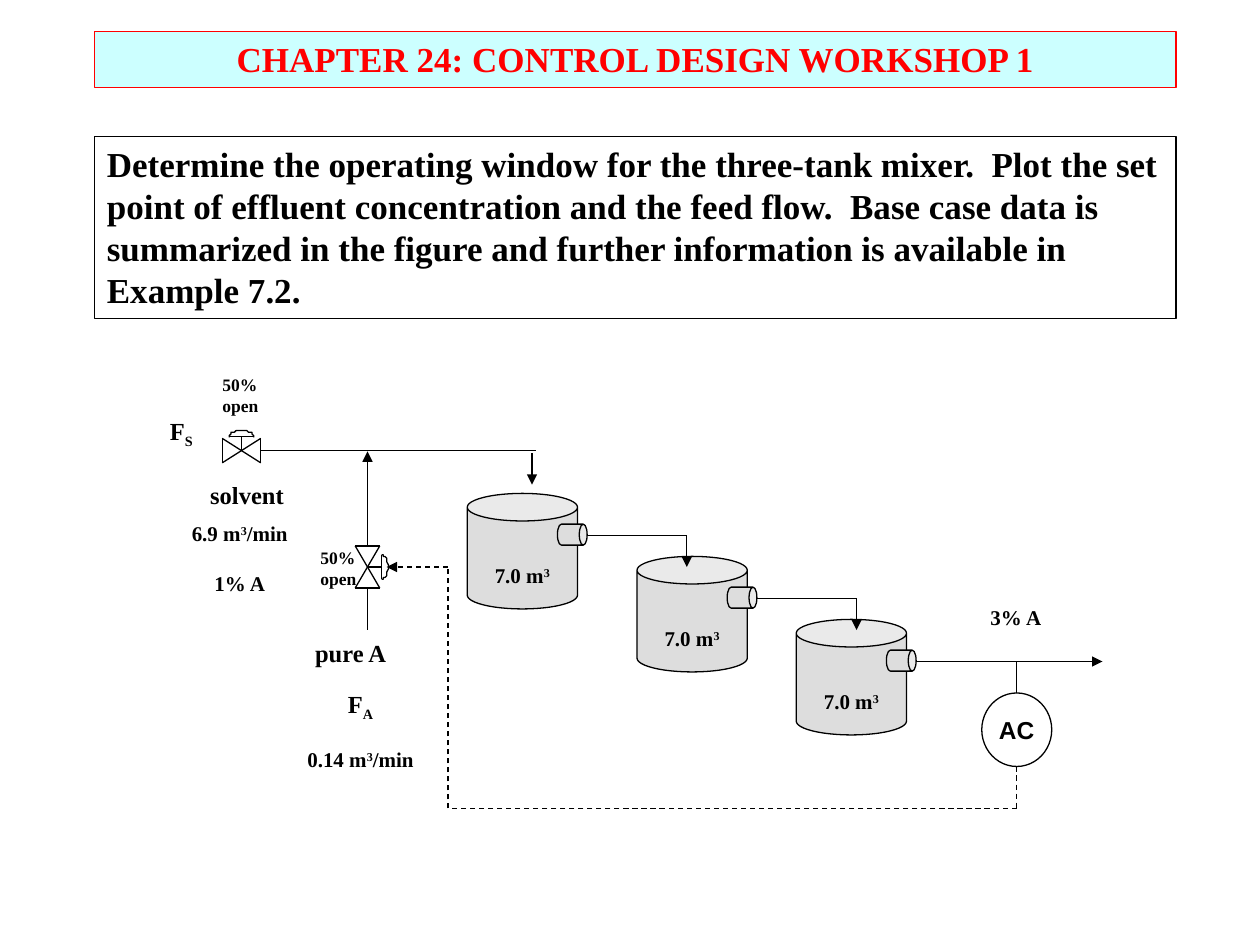
from math import cos, pi, sin

from pptx import Presentation
from pptx.dml.color import RGBColor
from pptx.enum.dml import MSO_LINE
from pptx.enum.shapes import MSO_CONNECTOR, MSO_SHAPE
from pptx.enum.text import MSO_ANCHOR, MSO_AUTO_SIZE, PP_ALIGN
from pptx.oxml.xmlchemy import OxmlElement
from pptx.util import Pt

SERIF, SANS = "Times New Roman", "Arial"
BLACK, RED, CYAN, GREY = "000000", "FF0000", "CCFFFF", "DDDDDD"
LEFT, CENTER = PP_ALIGN.LEFT, PP_ALIGN.CENTER
BASELINES = {"^": "30000", "_": "-25000"}


def color(value):
    return RGBColor.from_string(value)


def write(frame, text, size=12, font=SERIF, fill=BLACK, align=LEFT,
          anchor=MSO_ANCHOR.TOP, wrap=False, gap=0, sizes=()):
    """Put one paragraph per line; |^x| is raised and |_x| is lowered."""
    frame.word_wrap = wrap
    frame.auto_size = MSO_AUTO_SIZE.NONE
    frame.vertical_anchor = anchor
    for index, line in enumerate(text.split("\n")):
        paragraph = frame.add_paragraph() if index else frame.paragraphs[0]
        paragraph.alignment = align
        paragraph.space_before = Pt(gap if index else 0)
        for piece in filter(None, line.split("|")):
            run = paragraph.add_run()
            run.text = piece.lstrip("^_")
            run.font.size = Pt(sizes[index] if sizes else size)
            run.font.name = font
            run.font.bold = True
            run.font.color.rgb = color(fill)
            if piece[0] in BASELINES:
                run.font._element.set("baseline", BASELINES[piece[0]])


def label(slide, text, left, top, width, height, **style):
    box = slide.shapes.add_textbox(Pt(left), Pt(top), Pt(width), Pt(height))
    write(box.text_frame, text, **style)
    return box


def outline(shape, line=BLACK, fill=None):
    if fill:
        shape.fill.solid()
        shape.fill.fore_color.rgb = color(fill)
    else:
        shape.fill.background()
    shape.line.color.rgb = color(line)
    shape.line.width = Pt(0.75)


def add_preset(slide, kind, left, top, width, height, fill=None):
    shape = slide.shapes.add_shape(kind, Pt(left), Pt(top), Pt(width), Pt(height))
    shape.shadow.inherit = False
    outline(shape, fill=fill)
    return shape


def connect(slide, *points, dash=False, arrow=False):
    """Join the points by straight lines, with an optional arrowhead on the last."""
    segments = list(zip(points, points[1:]))
    for start, end in segments:
        connector = slide.shapes.add_connector(
            MSO_CONNECTOR.STRAIGHT, *(Pt(value) for value in start + end))
        connector.line.color.rgb = color(BLACK)
        connector.line.width = Pt(0.75)
        if dash:
            connector.line.dash_style = MSO_LINE.DASH
        if arrow and (start, end) == segments[-1]:
            head = OxmlElement("a:tailEnd")
            head.set("type", "triangle")
            connector.line._get_or_add_ln().append(head)
        connector._element.spPr.append(OxmlElement("a:effectLst"))


def add_valve(slide, x, y, half_length, vertical=False):
    """Control valve around (x, y), its actuator on top, or right if vertical."""
    def at(along, across):
        return (x + across, y + along) if vertical else (x + along, y - across)

    half_width, stem, dome_half, dome_rise = 7, 8, 7, 3.6
    connect(slide, at(-half_length, -half_width), at(-half_length, half_width),
            at(half_length, -half_width), at(half_length, half_width),
            at(-half_length, -half_width))
    connect(slide, at(0, 0), at(0, stem))
    connect(slide, at(-dome_half, stem), at(dome_half, stem))
    arc = [at(dome_half * cos(pi * i / 16), stem + dome_rise * sin(pi * i / 16))
           for i in range(17)]
    builder = slide.shapes.build_freeform(*arc[0], scale=Pt(1))
    builder.add_line_segments(arc[1:], close=False)
    dome = builder.convert_to_shape()
    dome.shadow.inherit = False
    outline(dome)


def place_title(slide, left, top, width, height):
    title = slide.shapes.title
    title.left, title.top, title.width, title.height = map(Pt, (left, top, width, height))
    outline(title, RED, CYAN)
    write(title.text_frame, "CHAPTER 24: CONTROL DESIGN WORKSHOP 1", size=20,
          fill=RED, align=CENTER, wrap=True)


def place_task(slide, left, top, width, height):
    box = label(
        slide,
        "Determine the operating window for the three-tank mixer.  Plot the set "
        "point of effluent concentration and the feed flow.  Base case data is "
        "summarized in the figure and further information is available in "
        "Example 7.2.",
        left, top, width, height, size=20, wrap=True)
    outline(box)


def draw_solvent_feed(slide, left, top):
    pipe_y = top + 47.5
    connect(slide, (left + 59, pipe_y), (left + 216, pipe_y))
    connect(slide, (left + 214, top + 49), (left + 214, top + 67), arrow=True)
    add_valve(slide, left + 48, pipe_y, 11)
    label(slide, "50%\nopen", left + 30, top, 35, 31, size=10)
    label(slide, "F|_S", left, top + 24, 51, 24, size=14, wrap=True)
    label(slide, "solvent", left + 23, top + 61, 57, 24, size=14)
    label(slide, "6.9 m|^3|/min\n1% A", left + 12, top + 84, 70, 50,
          align=CENTER, gap=14)


def draw_component_feed(slide, left, top):
    pipe_x = left + 42
    connect(slide, (pipe_x, top + 54), (pipe_x, top), arrow=True)
    add_valve(slide, pipe_x, top + 66, 12, vertical=True)
    connect(slide, (pipe_x, top + 78), (pipe_x, top + 102))
    label(slide, "50%\nopen", left + 8, top + 51, 35, 31, size=10)
    label(slide, "pure A", left + 5, top + 103, 56, 24, size=14)
    label(slide, "F|_A|\n0.14 m|^3|/min", left, top + 132, 76, 53,
          sizes=(14, 12), align=CENTER, gap=14)


def draw_tanks(slide, left, top):
    """Three tanks in series, each overflowing into the next."""
    tanks = [(left + shift, top + 36 * i) for i, shift in enumerate((0, 97, 188))]
    for x, y in tanks:
        tank = add_preset(slide, MSO_SHAPE.CAN, x, y, 63, 66, GREY)
        nozzle = add_preset(slide, MSO_SHAPE.CAN, x + 54, y + 15, 12, 17, GREY)
        tank.adjustments[0] = 0.25
        nozzle.adjustments[0] = 0.375
        nozzle.rotation = 90
        label(slide, "7.0 m|^3", x + 8, y + 36, 47, 22, align=CENTER)
    for x, y in tanks[:-1]:
        connect(slide, (x + 68.5, y + 24), (x + 125.5, y + 24), (x + 125.5, y + 42),
                arrow=True)
    x, y = tanks[-1]
    connect(slide, (x + 68.5, y + 24), (x + 175, y + 24), arrow=True)


def draw_control_loop(slide, left, top):
    sensor_x, signal_x, bottom = left + 360, left + 35, top + 138
    analyzer = add_preset(slide, MSO_SHAPE.OVAL, sensor_x - 20, top + 72, 40, 42)
    write(analyzer.text_frame, "AC", size=14, font=SANS, align=CENTER,
          anchor=MSO_ANCHOR.MIDDLE)
    connect(slide, (sensor_x, top + 72), (sensor_x, top + 54))
    connect(slide, (sensor_x, top + 114), (sensor_x, bottom), (signal_x, bottom),
            (signal_x, top), (left, top), dash=True, arrow=True)
    label(slide, "3% A", left + 336, top + 18, 47, 22, align=CENTER)


def main():
    presentation = Presentation()
    presentation.slide_width, presentation.slide_height = Pt(720), Pt(540)
    slide = presentation.slides.add_slide(presentation.slide_layouts[5])
    place_title(slide, 54, 18, 618, 32)
    place_task(slide, 54, 78, 618, 104)
    draw_tanks(slide, 267, 282)
    draw_solvent_feed(slide, 90, 210)
    draw_component_feed(slide, 168, 258)
    draw_control_loop(slide, 221, 324)
    presentation.save("out.pptx")


if __name__ == "__main__":
    main()
